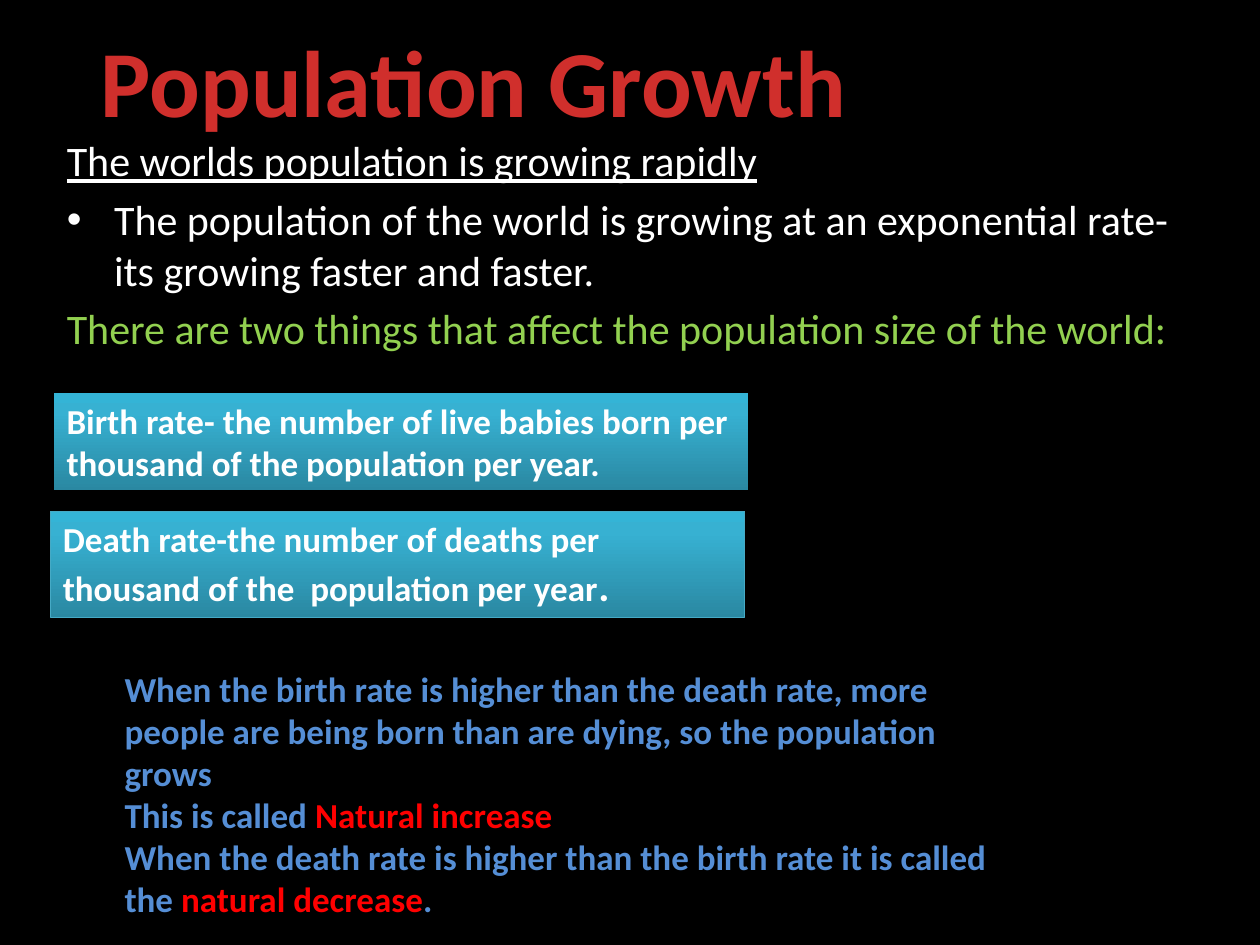
from dataclasses import dataclass
from typing import Optional

import pptx
import pptx.dml.color
import pptx.enum.shapes
import pptx.enum.text
import pptx.oxml
import pptx.oxml.ns
import pptx.util
from pptx.util import Inches

RGB = pptx.dml.color.RGBColor.from_string
ANCHOR = pptx.enum.text.MSO_ANCHOR
ALIGN = pptx.enum.text.PP_ALIGN


@dataclass(frozen=True)
class Theme:
    font: str = "Calibri"
    background: str = "000000"
    light: str = "FFFFFF"
    heading: str = "D02F2C"
    accent: str = "92D050"
    explanation: str = "558ED5"
    keyword: str = "FF0000"
    box_border: str = "46AAC5"
    box_gradient: tuple = ((0, "2A88A2"), (80, "37B1D2"), (100, "34B4D6"))
    title_size: int = 54
    body_size: int = 24
    note_size: int = 20


THEME = Theme()


@dataclass(frozen=True)
class Run:
    text: str
    color: str = THEME.light
    size: int = THEME.note_size
    bold: bool = True
    underline: bool = False


@dataclass(frozen=True)
class Paragraph:
    runs: tuple
    bullet: bool = False


@dataclass(frozen=True)
class Definition:
    left: float
    top: float
    height: float
    runs: tuple
    border: Optional[str] = None


DEFINITION_WIDTH = 5.51
DEFINITIONS = (
    Definition(0.43, 3.12, 0.77, (
        Run("Birth rate- the number of live babies born per thousand of the population per year."),
    )),
    Definition(0.4, 4.06, 0.84, (
        Run("Death rate-the number of deaths per thousand of the  population per year"),
        Run(".", size=THEME.body_size),
    ), THEME.box_border),
)

HEADING = Run("Population Growth", THEME.heading, THEME.title_size)

INTRODUCTION = (
    Paragraph((Run("The worlds population is growing rapidly",
                   size=THEME.body_size, bold=False, underline=True),)),
    Paragraph((Run("The population of the world is growing at an exponential rate- "
                   "its growing faster and faster.",
                   size=THEME.body_size, bold=False),), bullet=True),
    Paragraph((Run("There are two things that affect the population size of the world:",
                   THEME.accent, THEME.body_size, bold=False),)),
)

EXPLANATION = (
    Paragraph((Run("When the birth rate is higher than the death rate, more people are being born "
                   "than are dying, so the population grows", THEME.explanation),)),
    Paragraph((Run("This is called ", THEME.explanation),
               Run("Natural increase", THEME.keyword))),
    Paragraph((Run("When the death rate is higher than the birth rate it is called the ",
                   THEME.explanation),
               Run("natural decrease", THEME.keyword),
               Run(".", THEME.explanation))),
)


def place(shape, left: float, top: float, width: float, height: float) -> None:
    shape.left, shape.top = Inches(left), Inches(top)
    shape.width, shape.height = Inches(width), Inches(height)


def add_runs(paragraph, runs: tuple) -> None:
    for item in runs:
        run = paragraph.add_run()
        run.text = item.text
        font = run.font
        font.name = THEME.font
        font.size = pptx.util.Pt(item.size)
        font.bold = item.bold
        font.underline = item.underline
        font.color.rgb = RGB(item.color)


def write_paragraphs(frame, paragraphs: tuple, listed: bool = False) -> None:
    frame.word_wrap = True
    frame.auto_size = pptx.enum.text.MSO_AUTO_SIZE.NONE
    frame.vertical_anchor = ANCHOR.TOP
    for index, item in enumerate(paragraphs):
        paragraph = frame.add_paragraph() if index else frame.paragraphs[0]
        paragraph.alignment = ALIGN.LEFT
        if listed and not item.bullet:
            remove_bullet(paragraph)
        add_runs(paragraph, item.runs)


def remove_bullet(paragraph) -> None:
    properties = paragraph._p.get_or_add_pPr()
    properties.set("marL", "0")
    properties.set("indent", "0")
    properties.append(pptx.oxml.parse_xml(f'<a:buNone {pptx.oxml.ns.nsdecls("a")}/>'))


def fill_gradient(shape, stops: tuple) -> None:
    shape.fill.gradient()
    shape.fill.gradient_angle = 90
    stop_list = shape._element.spPr.find(
        f'{pptx.oxml.ns.qn("a:gradFill")}/{pptx.oxml.ns.qn("a:gsLst")}')
    for stop in list(stop_list):
        stop_list.remove(stop)
    for percent, color in stops:
        stop_list.append(pptx.oxml.parse_xml(
            f'<a:gs {pptx.oxml.ns.nsdecls("a")} pos="{percent * 1000}">'
            f'<a:srgbClr val="{color}"/></a:gs>'))


def add_definition(slide, definition: Definition) -> None:
    box = slide.shapes.add_shape(
        pptx.enum.shapes.MSO_SHAPE.RECTANGLE,
        Inches(definition.left), Inches(definition.top),
        Inches(DEFINITION_WIDTH), Inches(definition.height))
    box.shadow.inherit = False
    fill_gradient(box, THEME.box_gradient)
    if definition.border:
        box.line.color.rgb = RGB(definition.border)
        box.line.width = pptx.util.Pt(0.75)
    else:
        box.line.fill.background()
    write_paragraphs(box.text_frame, (Paragraph(definition.runs),))


def main() -> None:
    presentation = pptx.Presentation()
    presentation.slide_width, presentation.slide_height = Inches(10), Inches(7.5)
    slide = presentation.slides.add_slide(presentation.slide_layouts[1])
    slide.background.fill.solid()
    slide.background.fill.fore_color.rgb = RGB(THEME.background)

    heading = slide.shapes.title
    place(heading, 0.67, 0.13, 6.18, 1.01)
    heading.text_frame.word_wrap = False
    heading.text_frame.auto_size = pptx.enum.text.MSO_AUTO_SIZE.NONE
    heading.text_frame.vertical_anchor = ANCHOR.TOP
    heading.text_frame.paragraphs[0].alignment = ALIGN.CENTER
    add_runs(heading.text_frame.paragraphs[0], (HEADING,))

    introduction = slide.placeholders[1]
    place(introduction, 0.43, 1.02, 9, 4.95)
    write_paragraphs(introduction.text_frame, INTRODUCTION, listed=True)

    for definition in DEFINITIONS:
        add_definition(slide, definition)

    explanation = slide.shapes.add_textbox(
        Inches(0.89), Inches(5.25), Inches(7.34), Inches(2.12))
    write_paragraphs(explanation.text_frame, EXPLANATION)

    presentation.save("out.pptx")


if __name__ == "__main__":
    main()
